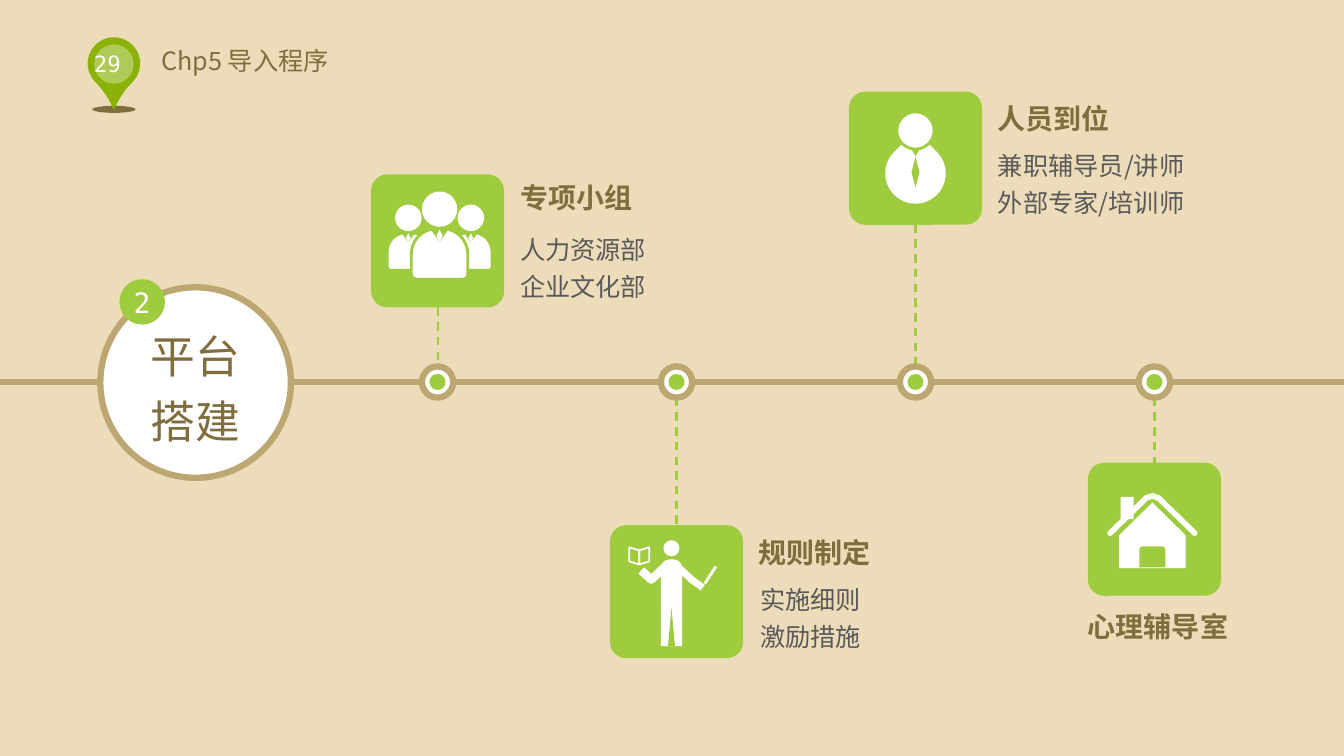
import pptx
import pptx.util
import pptx.dml.color
import pptx.enum.dml
import pptx.enum.shapes
import pptx.enum.text
import pptx.oxml
import pptx.oxml.ns
import lxml.etree

Inches = pptx.util.Inches
Pt = pptx.util.Pt
RGBColor = pptx.dml.color.RGBColor
KIND = pptx.enum.shapes.MSO_SHAPE
ALIGN = pptx.enum.text.PP_ALIGN
SAND = RGBColor(0xED, 0xDC, 0xB9)
TAN = RGBColor(0xBC, 0xA7, 0x72)
BROWN = RGBColor(0x80, 0x6D, 0x3E)
GRAY = RGBColor(0x59, 0x59, 0x59)
GREEN = RGBColor(0x9F, 0xCC, 0x3E)
LEAF = RGBColor(0x8C, 0xB2, 0x08)
WHITE = RGBColor(0xFF, 0xFF, 0xFF)
SANS = "Noto Sans CJK SC"
MONO = "DejaVu Sans Mono"

deck = pptx.Presentation()
deck.slide_width, deck.slide_height = Inches(13.33), Inches(7.5)
slide = deck.slides.add_slide(deck.slide_layouts[5])
slide.background.fill.solid()
slide.background.fill.fore_color.rgb = SAND


def shape(home, kind, mid, top, w, h, fill, edge=None, thick=4.5, turn=0, bends=()):
    item = home.add_shape(kind, Inches(mid - w / 2), Inches(top), Inches(w), Inches(h))
    item.shadow.inherit = False
    item.rotation = turn
    for i, bend in enumerate(bends):
        item.adjustments[i] = bend
    item.fill.solid()
    item.fill.fore_color.rgb = fill
    item.line.fill.background()
    if edge:
        item.line.color.rgb = edge
        item.line.width = Pt(thick)
    return item


def write(frame, text, size, color, font=SANS, bold=False, align=ALIGN.LEFT, gap=1.0):
    frame.word_wrap = True
    frame.text = text
    for para in frame.paragraphs:
        para.alignment = align
        para.line_spacing = gap
        for run in para.runs:
            run.font.size = Pt(size)
            run.font.bold = bold
            run.font.name = font
            run.font.color.rgb = color


title = slide.shapes.title
title.left, title.top, title.width, title.height = map(Inches, (1.5, 0.4, 1.9, 0.4))
title.text_frame.auto_size = pptx.enum.text.MSO_AUTO_SIZE.NONE
title.text_frame.vertical_anchor = pptx.enum.text.MSO_ANCHOR.TOP
write(title.text_frame, "Chp5 导入程序", 18, BROWN)

axis = 3.79
ring = 0.31
side = 1.32
tops = [1.73, 5.21, 0.91, 4.59]
nodes = [(4.34 + 2.37 * i, top) for i, top in enumerate(tops)]
lines = [(x, top + side, x, axis - ring / 2) if top < axis else (x, axis + ring / 2, x, top) for x, top in nodes]
for ends in lines + [(0, axis, 13.33, axis)]:
    link = slide.shapes.add_connector(pptx.enum.shapes.MSO_CONNECTOR.STRAIGHT, *map(Inches, ends))
    drop = ends in lines
    link.line.color.rgb = GREEN if drop else TAN
    link.line.width = Pt(1.5 if drop else 4.5)
    if drop:
        link.line.dash_style = pptx.enum.dml.MSO_LINE.DASH
    lxml.etree.SubElement(link._element.spPr, pptx.oxml.ns.qn("a:effectLst"))

hub = shape(slide.shapes, KIND.OVAL, 1.94, 2.85, 1.89, 1.89, WHITE, TAN)
badge = shape(slide.shapes, KIND.OVAL, 1.41, 2.77, 0.45, 0.45, GREEN)
for item in (hub, badge):
    frame = item.text_frame
    frame.margin_left = frame.margin_right = frame.margin_top = frame.margin_bottom = 0
write(hub.text_frame, "平台\n搭建", 32, BROWN, align=ALIGN.CENTER, gap=1.2)
write(badge.text_frame, "2", 20, WHITE, MONO, align=ALIGN.CENTER)

icons = []
for x, top in nodes:
    shape(slide.shapes, KIND.ROUNDED_RECTANGLE, x, top, side, side, GREEN, bends=[0.122])
    knot = slide.shapes.add_group_shape().shapes
    shape(knot, KIND.OVAL, x, axis - ring / 2, ring, ring, WHITE, TAN)
    shape(knot, KIND.OVAL, x, axis - 0.08, 0.16, 0.16, GREEN)
    icons.append(slide.shapes.add_group_shape().shapes)
team, guide, coach, house = icons

x, top = nodes[0]
x += 0.02
for shift, drop, zoom in [(-0.31, 0.3, 0.75), (0.31, 0.3, 0.75), (0, 0.17, 1)]:
    mid, y = x + shift, top + drop
    shape(team, KIND.ROUND_2_SAME_RECTANGLE, mid, y + 0.37 * zoom, 0.56 * zoom, 0.5 * zoom,
          WHITE, GREEN, 2, bends=[0.5, 0.1])
    shape(team, KIND.FLOWCHART_MERGE, mid, y + 0.36 * zoom, 0.2 * zoom, 0.14 * zoom, GREEN)
    shape(team, KIND.DIAMOND, mid, y + 0.38 * zoom, 0.06 * zoom, 0.12 * zoom, WHITE)
    shape(team, KIND.OVAL, mid, y, 0.35 * zoom, 0.35 * zoom, WHITE)

x, top = nodes[1]
x -= 0.05
shape(guide, KIND.OVAL, x, top + 0.15, 0.16, 0.16, WHITE)
shape(guide, KIND.ROUND_2_SAME_RECTANGLE, x, top + 0.34, 0.21, 0.86, WHITE, bends=[0.4, 0])
shape(guide, KIND.ISOSCELES_TRIANGLE, x, top + 0.82, 0.07, 0.38, GREEN)
raised = [(x - 0.06, top + 0.41), (x - 0.2, top + 0.54), (x - 0.3, top + 0.45)]
lowered = [(x + 0.06, top + 0.41), (x + 0.2, top + 0.54), (x + 0.31, top + 0.62)]
stick = [(x + 0.44, top + 0.41), (x + 0.33, top + 0.58)]
spine, fold = x - 0.32, top + 0.25
pages = [
    [(spine, fold), (edge, fold - 0.03), (edge, fold + 0.11), (spine, fold + 0.14), (spine, fold)]
    for edge in (spine - 0.1, spine + 0.1)
]

x, top = nodes[2]
shape(coach, KIND.TEAR, x, top + 0.51, 0.6, 0.6, WHITE, turn=315)
shape(coach, KIND.OVAL, x, top + 0.2, 0.37, 0.37, WHITE, GREEN, 2)
shape(coach, KIND.FLOWCHART_MERGE, x, top + 0.57, 0.08, 0.07, GREEN)
shape(coach, KIND.DIAMOND, x, top + 0.65, 0.08, 0.3, GREEN)

x, top = nodes[3]
x -= 0.02
shape(house, KIND.RECTANGLE, x - 0.25, top + 0.34, 0.13, 0.22, WHITE)
shape(house, KIND.PENTAGON, x, top + 0.39, 0.65, 0.66, WHITE, turn=270, bends=[0.5])
shape(house, KIND.ROUND_2_SAME_RECTANGLE, x, top + 0.83, 0.26, 0.21, GREEN, bends=[0.17, 0])
eave, peak = 0.42, top + 0.34
roof = [(x - eave, peak + 0.36), (x - 0.06, peak + 0.01), (x, peak - 0.01), (x + 0.06, peak + 0.01),
        (x + eave, peak + 0.36)]

strokes = [(guide, 6, raised), (guide, 5, lowered), (guide, 2, stick), (house, 4, roof)]
strokes += [(guide, 1.25, page) for page in pages]
for home, thick, dots in strokes:
    dots = [(Inches(a), Inches(b)) for a, b in dots]
    pen = home.build_freeform(*dots[0])
    pen.add_line_segments(dots[1:], close=False)
    path = pen.convert_to_shape()
    path.shadow.inherit = False
    path.fill.background()
    path.line.color.rgb = WHITE
    path.line.width = Pt(thick)
    if home is house:
        path._element.spPr.find(pptx.oxml.ns.qn("a:ln")).set("cap", "rnd")

shape(slide.shapes, KIND.OVAL, 1.13, 1.05, 0.43, 0.07, BROWN)
shape(slide.shapes, KIND.TEAR, 1.13, 0.37, 0.52, 0.52, LEAF, turn=135, bends=[1.26])
disc = shape(slide.shapes, KIND.OVAL, 1.13, 0.44, 0.39, 0.39, WHITE)
tint = disc._element.spPr.find(".//" + pptx.oxml.ns.qn("a:srgbClr"))
lxml.etree.SubElement(tint, pptx.oxml.ns.qn("a:alpha")).set("val", "32000")

HEAD = (20, BROWN, SANS, True)
BODY = (18, GRAY, SANS, False)
labels = [
    (0.71, 0.45, 0.71, 0.37, "29", (16, WHITE, MONO, False), ALIGN.CENTER, 1.0),
    (5.06, 1.64, 1.65, 0.5, "专项小组", HEAD, ALIGN.LEFT, 1.3),
    (5.06, 2.21, 1.56, 0.84, "人力资源部企业文化部", BODY, ALIGN.LEFT, 1.22),
    (7.42, 5.16, 1.65, 0.5, "规则制定", HEAD, ALIGN.LEFT, 1.3),
    (7.44, 5.68, 1.94, 0.84, "实施细则\n激励措施", BODY, ALIGN.LEFT, 1.22),
    (9.79, 0.86, 1.65, 0.5, "人员到位", HEAD, ALIGN.LEFT, 1.3),
    (9.8, 1.38, 2.83, 0.84, "兼职辅导员/讲师\n外部专家/培训师", BODY, ALIGN.LEFT, 1.22),
    (10.14, 5.96, 2.69, 0.45, "心理辅导室", HEAD, ALIGN.CENTER, 1.12),
]
for x, y, w, h, text, style, align, gap in labels:
    box = slide.shapes.add_textbox(Inches(x), Inches(y), Inches(w), Inches(h))
    write(box.text_frame, text, *style, align, gap)

deck.save("out.pptx")
